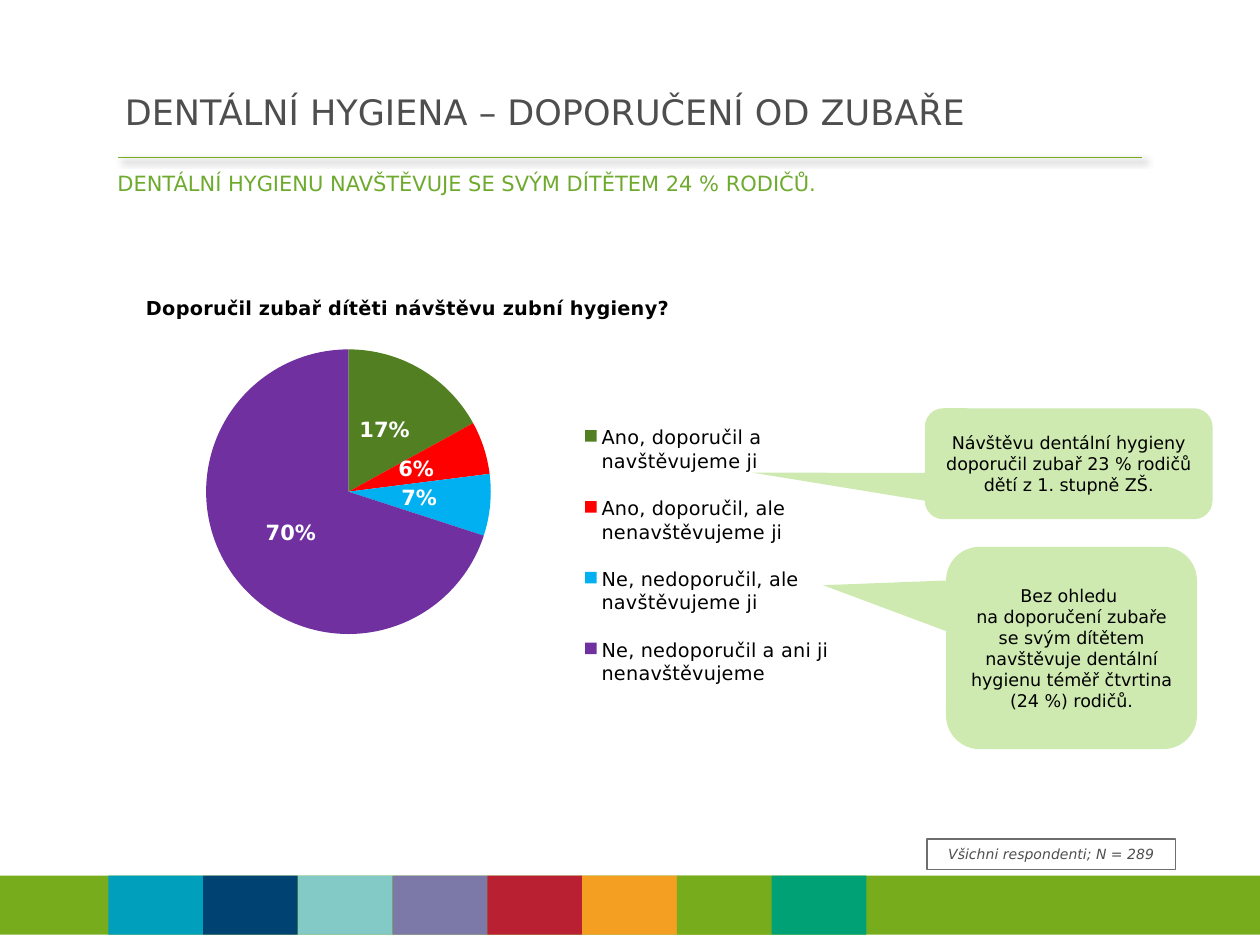
from lxml import etree
from pptx import Presentation
from pptx.chart.data import CategoryChartData
from pptx.dml.color import RGBColor
from pptx.enum.chart import XL_CHART_TYPE, XL_LABEL_POSITION, XL_LEGEND_POSITION
from pptx.enum.shapes import MSO_CONNECTOR, MSO_SHAPE
from pptx.enum.text import MSO_ANCHOR, PP_ALIGN
from pptx.oxml import parse_xml
from pptx.oxml.ns import nsdecls, qn
from pptx.util import Pt

PIE = XL_CHART_TYPE.PIE
LABEL_CENTER = XL_LABEL_POSITION.CENTER
LEGEND_LEFT = XL_LEGEND_POSITION.LEFT
STRAIGHT = MSO_CONNECTOR.STRAIGHT
RECTANGLE = MSO_SHAPE.RECTANGLE
CALLOUT = MSO_SHAPE.ROUNDED_RECTANGULAR_CALLOUT
TOP, MIDDLE = MSO_ANCHOR.TOP, MSO_ANCHOR.MIDDLE
LEFT, CENTER = PP_ALIGN.LEFT, PP_ALIGN.CENTER

FONT = "DejaVu Sans"
GREEN, GREY, BLACK, WHITE = "77AD1C", "4E4E4E", "000000", "FFFFFF"
TILE_COLORS = ["009FBB", "004272", "83C9C6", "7C78A8", "B92032", "F49F22", GREEN, "00A275"]
ANSWERS = [
    ("Ano, doporučil a navštěvujeme ji", 0.17, "527F22"),
    ("Ano, doporučil, ale nenavštěvujeme ji", 0.06, "FF0000"),
    ("Ne, nedoporučil, ale navštěvujeme ji", 0.07, "00B0F0"),
    ("Ne, nedoporučil a ani ji nenavštěvujeme", 0.7, "7030A0"),
]


def color(hex_string):
    return RGBColor.from_string(hex_string)


def points(*lengths):
    return [Pt(length) for length in lengths]


def style_font(font, size, hex_string, bold=False, italic=False):
    font.name = FONT
    font.size = Pt(size)
    font.bold = bold
    font.italic = italic
    font.color.rgb = color(hex_string)


def set_text(shape, text, size, hex_string, align=LEFT, anchor=MIDDLE, italic=False):
    frame = shape.text_frame
    frame.word_wrap = True
    frame.vertical_anchor = anchor
    frame.text = text
    para = frame.paragraphs[0]
    para.alignment = align
    for span in para.runs:
        style_font(span.font, size, hex_string, italic=italic)


def add_text(page, area, text, size, hex_string, anchor):
    box = page.shapes.add_textbox(*points(*area))
    set_text(box, text, size, hex_string, anchor=anchor)


def add_box(page, kind, area, fill=None, line=None):
    box = page.shapes.add_shape(kind, *points(*area))
    box.shadow.inherit = False
    if fill:
        box.fill.solid()
        box.fill.fore_color.rgb = color(fill)
    else:
        box.fill.background()
    if line:
        box.line.color.rgb = color(line)
        box.line.width = Pt(0.75)
    else:
        box.line.fill.background()
    return box


def add_callout(page, area, tip, text):
    box = add_box(page, CALLOUT, area, fill="CEEAB0")
    box.adjustments[0], box.adjustments[1] = tip
    set_text(box, text, 10, BLACK, CENTER)


def add_rule(page, left, right, top):
    rule = page.shapes.add_connector(STRAIGHT, *points(left, top, right, top))
    rule.line.color.rgb = color(GREEN)
    rule.line.width = Pt(0.75)
    # Soft shadow, down and to the right
    effects = etree.SubElement(rule._element.spPr, qn("a:effectLst"))
    shadow = etree.SubElement(effects, qn("a:outerShdw"), blurRad=str(Pt(4)),
                              dist=str(Pt(3)), dir=str(45 * 60000), rotWithShape="0")
    shade = etree.SubElement(shadow, qn("a:srgbClr"), val=BLACK)
    etree.SubElement(shade, qn("a:alpha"), val="40000")


def layout_xml(inner=False, **fractions):
    target = '<c:layoutTarget val="inner"/>' if inner else ""
    modes = "".join(f'<c:{axis}Mode val="edge"/>' for axis in "xy")
    sizes = "".join(f'<c:{key} val="{value}"/>' for key, value in fractions.items())
    return parse_xml(f'<c:layout {nsdecls("c")}><c:manualLayout>{target}{modes}{sizes}'
                     "</c:manualLayout></c:layout>")


def place(element, layout, before):
    for old in element.findall(qn("c:layout")):
        element.remove(old)
    following = [child for child in element if child.tag in [qn(tag) for tag in before]]
    following[0].addprevious(layout)


def add_pie(page, area):
    data = CategoryChartData(number_format="0%")
    data.categories = [name for name, _, _ in ANSWERS]
    data.add_series("Series 1", [share for _, share, _ in ANSWERS])
    chart = page.shapes.add_chart(PIE, *points(*area), data).chart
    style_font(chart.font, 18, BLACK)

    # Title
    chart.has_title = True
    frame = chart.chart_title.text_frame
    frame.text = "Doporučil zubař dítěti návštěvu zubní hygieny?"
    style_font(frame.paragraphs[0].runs[0].font, 11, BLACK, bold=True)
    chart.chart_title.include_in_layout = False
    place(chart.chart_title._element, layout_xml(x=0.13, y=0.03), ["c:overlay"])

    # Slices and their labels
    plot = chart.plots[0]
    plot.vary_by_categories = True
    for index, (_, _, fill) in enumerate(ANSWERS):
        slice_format = plot.series[0].points[index].format
        slice_format.fill.solid()
        slice_format.fill.fore_color.rgb = color(fill)
        slice_format.line.fill.background()
    labels = plot.series[0].data_labels
    labels.show_value = True
    labels.show_percentage = False
    labels.number_format = "0%"
    labels.number_format_is_linked = False
    labels.position = LABEL_CENTER
    style_font(labels.font, 12, WHITE, bold=True)
    place(plot._element.getparent(),
          layout_xml(inner=True, x=0.18, y=0.16, w=0.4, h=0.64), ["c:pieChart"])

    # Legend
    chart.has_legend = True
    chart.legend.position = LEGEND_LEFT
    chart.legend.include_in_layout = False
    style_font(chart.legend.font, 11, BLACK)
    place(chart.legend._element, layout_xml(x=0.64, y=0.28, w=0.35, h=0.69), ["c:overlay"])


def add_footer(page):
    top, height, first, width = 500.4, 33.8, 61.9, 54.15
    add_box(page, RECTANGLE, (0, top, 720, height), fill=GREEN)
    for index, fill in enumerate(TILE_COLORS):
        add_box(page, RECTANGLE, (first + index * width, top, width, height), fill=fill)


def main():
    deck = Presentation()
    deck.slide_width, deck.slide_height = points(720, 540)
    page = deck.slides.add_slide(deck.slide_layouts[6])

    # Frame of the page
    add_rule(page, 67.5, 652.5, 90)
    add_footer(page)

    # Headings
    add_text(page, (64.3, 45, 638.6, 37), "DENTÁLNÍ HYGIENA – DOPORUČENÍ OD ZUBAŘE",
             20, GREY, MIDDLE)
    add_text(page, (60, 93.8, 635, 39.6),
             "DENTÁLNÍ HYGIENU NAVŠTĚVUJE SE SVÝM DÍTĚTEM 24 % RODIČŮ.", 12, "6EAA2E", TOP)

    # Survey result
    add_pie(page, (20.2, 159, 470.9, 254.2))
    note = add_box(page, RECTANGLE, (529.8, 479.5, 142, 17.3), line="6E6E6E")
    set_text(note, "Všichni respondenti; N = 289", 8, GREY, CENTER, italic=True)

    # Comments
    add_callout(page, (528.5, 233.3, 164.4, 63.4), (-1.1, 0.08),
                "Návštěvu dentální hygieny doporučil zubař 23 % rodičů dětí z 1. stupně ZŠ.")
    add_callout(page, (540.6, 312.5, 143.4, 115.6), (-0.99, -0.31),
                "Bez ohledu \vna doporučení zubaře se svým dítětem navštěvuje dentální "
                "hygienu téměř čtvrtina (24 %) rodičů.")

    deck.save("out.pptx")


if __name__ == "__main__":
    main()
